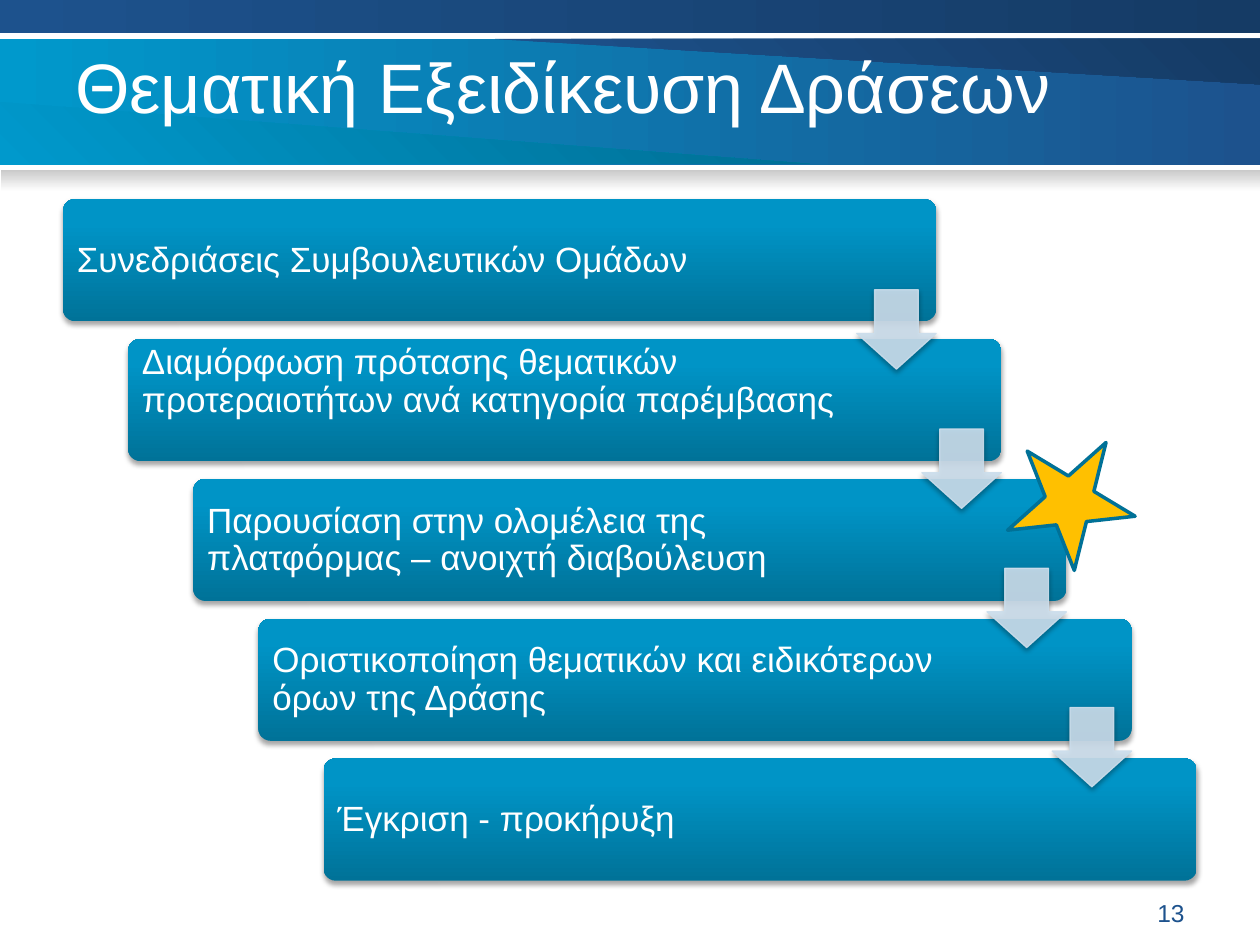
"""Build the slide on the thematic steps of the actions."""
from lxml.etree import SubElement
from pptx import Presentation
from pptx.dml.color import RGBColor
from pptx.enum.shapes import MSO_SHAPE
from pptx.enum.text import MSO_ANCHOR, PP_ALIGN
from pptx.oxml.ns import qn
from pptx.util import Inches, Pt

WHITE = RGBColor(0xFF, 0xFF, 0xFF)
BLACK = RGBColor(0x00, 0x00, 0x00)
SKY = RGBColor(0x00, 0x99, 0xCC)
NAVY = RGBColor(0x1D, 0x52, 0x8D)
DARK = RGBColor(0x15, 0x3B, 0x65)
TEAL = RGBColor(0x00, 0x6D, 0x92)
GREY = RGBColor(0xCA, 0xCA, 0xCA)
PALE = RGBColor(0xCC, 0xDE, 0xEC)
GOLD = RGBColor(0xFF, 0xC0, 0x00)
EDGE = RGBColor(0x00, 0x71, 0x97)
STEP = [(0, RGBColor(0x00, 0x72, 0x98)), (80, RGBColor(0x00, 0x94, 0xC6)),
        (100, RGBColor(0x00, 0x95, 0xC7))]

BANDS = [
    ((0, 0.31, 10, 1), SKY, NAVY, 0),
    ((0, 0, 10, 0.26), NAVY, DARK, 0),
    ((0.01, 1.35, 9.99, 0.17), GREY, WHITE, 90),
]
WEDGES = [
    ([(9.82, 0.31), (3.93, 0.31), (10, 0.67), (10, 0.31)], NAVY, DARK),
    ([(0.19, 1.3), (6.43, 1.3), (0, 0.81), (0, 1.3)], SKY, TEAL),
]
MID = {"vertical_anchor": MSO_ANCHOR.MIDDLE}
TOP = {"vertical_anchor": MSO_ANCHOR.TOP, "margin_top": Inches(0.01)}
STEPS = [
    ("Συνεδριάσεις Συμβουλευτικών Ομάδων", MID),
    ("Διαμόρφωση πρότασης θεματικών προτεραιοτήτων ανά κατηγορία παρέμβασης", TOP),
    ("Παρουσίαση στην ολομέλεια της πλατφόρμας – ανοιχτή διαβούλευση", MID),
    ("Οριστικοποίηση θεματικών και ειδικότερων όρων της Δράσης", MID),
    ("Έγκριση - προκήρυξη", MID),
]
INSETS = {f"margin_{side}": Inches(0.08)
          for side in ("left", "top", "right", "bottom")}


def set_all(item, values):
    """Set each named attribute of an item."""
    for name, value in values.items():
        setattr(item, name, value)


def add_tint(parent, color, alpha=100):
    """Append a colour with its opacity to an XML parent."""
    tint = SubElement(parent, qn("a:srgbClr"), val=str(color))
    if alpha < 100:
        SubElement(tint, qn("a:alpha"), val=str(alpha * 1000))


def fade(shape, stops, angle):
    """Fill a shape with gradient stops at a clockwise angle."""
    shape.fill.gradient()
    shape.fill.gradient_angle = (360 - angle) % 360
    shape.line.fill.background()
    stop_list = shape._element.spPr.find(".//" + qn("a:gsLst"))
    for stop in list(stop_list):
        stop_list.remove(stop)
    for place, color in stops:
        add_tint(SubElement(stop_list, qn("a:gs"), pos=str(place * 1000)), color)


def cast(shape):
    """Give a shape a soft shadow below it."""
    effects = shape._element.spPr.find(qn("a:effectLst"))
    shadow = SubElement(effects, qn("a:outerShdw"), blurRad=str(Pt(3.1)),
                        dist=str(Pt(1.8)), dir="5400000", rotWithShape="0")
    add_tint(shadow, BLACK, 35)


def add_shape(slide, kind, place):
    """Add a preset shape without the theme shadow."""
    shape = slide.shapes.add_shape(kind, *map(Inches, place))
    shape.shadow.inherit = False
    return shape


def add_wedge(slide, points, start, end):
    """Add a slanted header outline with a diagonal fade."""
    first, *rest = [(Inches(x), Inches(y)) for x, y in points]
    path = slide.shapes.build_freeform(*first)
    path.add_line_segments(rest)
    shape = path.convert_to_shape()
    shape.shadow.inherit = False
    fade(shape, [(0, start), (100, end)], 315)


def add_text(slide, words, place, size, color=WHITE, frame=None, para=None):
    """Add a text box with one paragraph."""
    box = slide.shapes.add_textbox(*map(Inches, place)).text_frame
    set_all(box, {"word_wrap": True, **(frame or {})})
    line = box.paragraphs[0]
    set_all(line, para or {})
    run = line.add_run()
    run.text = words
    set_all(run.font, {"name": "Arial", "size": Pt(size)})
    run.font.color.rgb = color


def add_step(slide, index, words, anchor):
    """Add one stair step and its words."""
    left, top = 0.5 + 0.517 * index, 1.58 + 1.11 * index
    card = add_shape(slide, MSO_SHAPE.ROUNDED_RECTANGLE, (left, top, 6.93, 0.97))
    card.adjustments[0] = 0.1
    fade(card, STEP, 270)
    cast(card)
    add_text(slide, words, (left + 0.03, top + 0.03, 5.72, 0.92), 20,
             frame={**INSETS, **anchor}, para={"line_spacing": 0.9})


def add_arrow(slide, index):
    """Add the arrow that leads down from one step to the next."""
    place = (6.8 + 0.517 * index, 2.3 + 1.105 * index, 0.63, 0.63)
    arrow = add_shape(slide, MSO_SHAPE.DOWN_ARROW, place)
    arrow.adjustments[0], arrow.adjustments[1] = 0.45, 0.55
    arrow.adjustments[0], arrow.adjustments[1] = 0.55, 0.45
    arrow.line.width = Pt(0.75)
    for fill in (arrow.fill, arrow.line.fill):
        fill.solid()
        fill.fore_color.rgb = PALE
    for tint in arrow._element.spPr.iter(qn("a:srgbClr")):
        SubElement(tint, qn("a:alpha"), val="90000")
    cast(arrow)


def add_star(slide):
    """Add the tilted star that marks the open consultation."""
    star = add_shape(slide, MSO_SHAPE.STAR_5_POINT, (8.02, 3.44, 1, 1))
    star.rotation = 31.1
    star.fill.solid()
    star.fill.fore_color.rgb = GOLD
    star.line.color.rgb = EDGE
    star.line.width = Pt(2)


def add_head(slide):
    """Add the header bands and the title."""
    bar, *others = BANDS
    add_band(slide, *bar)
    for wedge in WEDGES:
        add_wedge(slide, *wedge)
    for band in others:
        add_band(slide, *band)
    add_text(slide, "Θεματική Εξειδίκευση Δράσεων", (0.5, 0.3, 9, 1.25), 40)


def add_band(slide, place, start, end, angle):
    """Add a header band with a straight fade."""
    band = add_shape(slide, MSO_SHAPE.RECTANGLE, place)
    fade(band, [(0, start), (100, end)], angle)


def main():
    """Build and save the slide."""
    deck = Presentation()
    set_all(deck, {"slide_width": Inches(10), "slide_height": Inches(7.5)})
    slide = deck.slides.add_slide(deck.slide_layouts[6])
    add_head(slide)
    for index, (words, anchor) in enumerate(STEPS):
        add_step(slide, index, words, anchor)
    for index in range(len(STEPS) - 1):
        add_arrow(slide, index)
    add_text(slide, "13", (7.17, 7.08, 2.33, 0.27), 14, NAVY,
             para={"alignment": PP_ALIGN.RIGHT})
    add_star(slide)
    deck.save("out.pptx")


if __name__ == "__main__":
    main()
